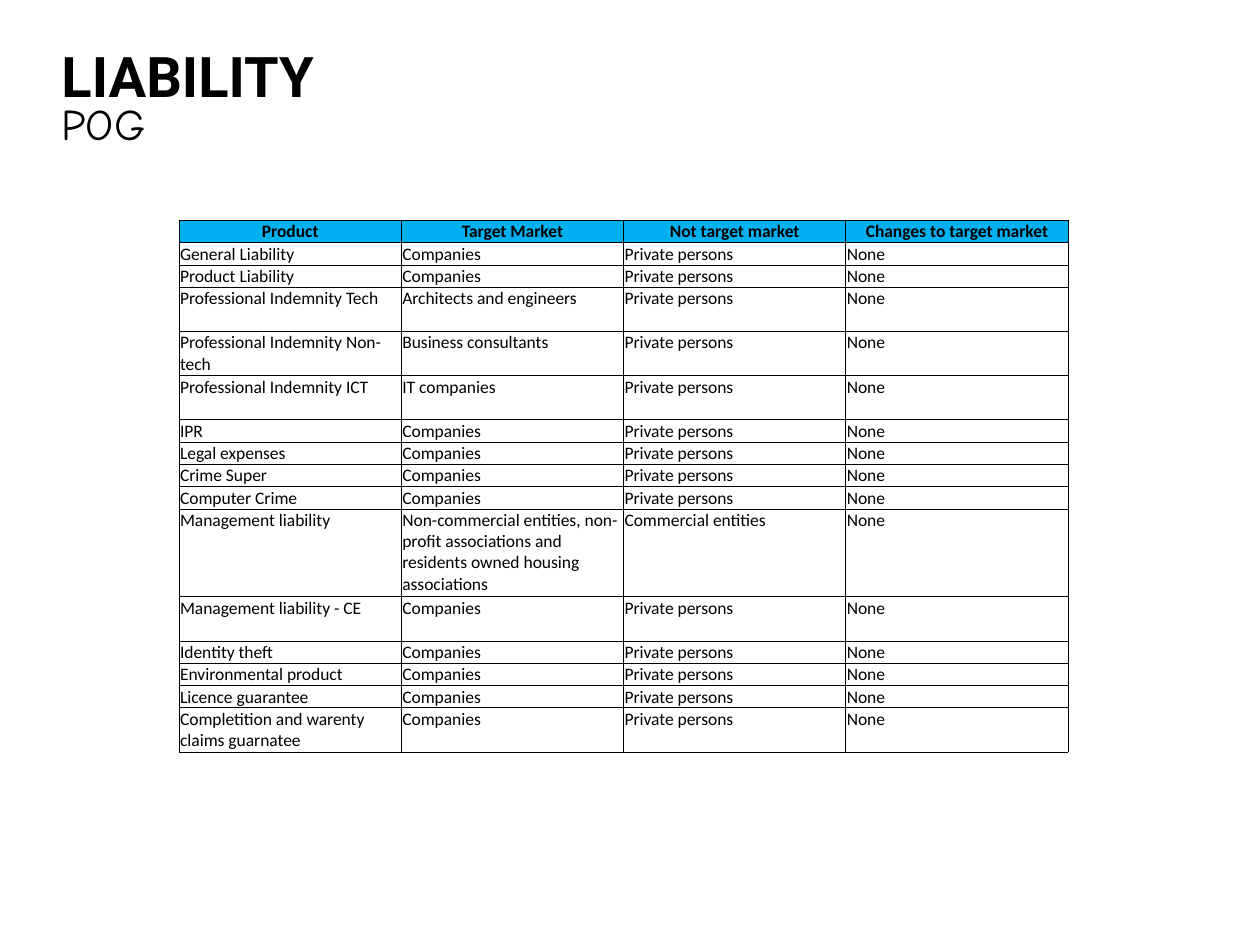
from pptx import Presentation
from pptx import util as u
from pptx.dml.color import RGBColor
from pptx.enum import text
from pptx.oxml import parse_xml
from pptx.oxml.ns import nsdecls

COLORS = {"ink": "000000", "header": "00B0F0"}
LINE_HEIGHTS = {1: 0.45, 2: 0.89, 4: 1.77}
HEADINGS = ["Product", "Target Market", "Not target market", "Changes to target market"]
COMPANIES, PRIVATE = "Companies", "Private persons"

# Product, target market, not target market, lines of row height
PRODUCTS = [
    ("General Liability", COMPANIES, PRIVATE, 1),
    ("Product Liability", COMPANIES, PRIVATE, 1),
    ("Professional Indemnity Tech", "Architects and engineers", PRIVATE, 2),
    ("Professional Indemnity Non-tech", "Business consultants", PRIVATE, 2),
    ("Professional Indemnity ICT", "IT companies", PRIVATE, 2),
    ("IPR", COMPANIES, PRIVATE, 1),
    ("Legal expenses", COMPANIES, PRIVATE, 1),
    ("Crime Super", COMPANIES, PRIVATE, 1),
    ("Computer Crime", COMPANIES, PRIVATE, 1),
    ("Management liability",
     "Non-commercial entities, non-profit associations and residents owned housing associations",
     "Commercial entities", 4),
    ("Management liability - CE", COMPANIES, PRIVATE, 2),
    ("Identity theft", COMPANIES, PRIVATE, 1),
    ("Environmental product", COMPANIES, PRIVATE, 1),
    ("Licence guarantee", COMPANIES, PRIVATE, 1),
    ("Completition and warenty claims guarnatee", COMPANIES, PRIVATE, 2),
]


def write(frame, words, font="Calibri", size=10, bold=False, color="ink",
          align=text.PP_ALIGN.LEFT):
    para = frame.paragraphs[0]
    para.alignment = align
    span = para.add_run()
    span.text = words
    span.font.name = font
    span.font.size = u.Pt(size)
    span.font.bold = bold
    span.font.color.rgb = RGBColor.from_string(COLORS[color])


class SlideBuilder:
    border_width = 0.5
    cell_inset = u.Cm(0.02)

    def __init__(self, page):
        self.page = page

    def heading(self, words, top, height, anchor, **style):
        box = self.page.shapes.add_textbox(u.Cm(0.99), u.Cm(top), u.Cm(23.19), u.Cm(height))
        frame = box.text_frame
        frame.word_wrap = True
        frame.vertical_anchor = anchor
        if anchor == text.MSO_ANCHOR.TOP:
            frame.margin_top = 0
        write(frame, words, **style)

    def border(self, cell):
        """Draw all four cell edges; must run before the cell's fill is set."""
        properties = cell._tc.get_or_add_tcPr()
        for edge in ("lnL", "lnR", "lnT", "lnB"):
            properties.append(parse_xml(
                f'<a:{edge} {nsdecls("a")} w="{u.Pt(self.border_width)}"><a:solidFill>'
                f'<a:srgbClr val="{COLORS["ink"]}"/></a:solidFill></a:{edge}>'))

    def cell(self, cell, words, is_header):
        self.border(cell)
        cell.margin_left = cell.margin_right = cell.margin_top = self.cell_inset
        cell.margin_bottom = 0
        if is_header:
            cell.fill.solid()
            cell.fill.fore_color.rgb = RGBColor.from_string(COLORS["header"])
            write(cell.text_frame, words, bold=True, align=text.PP_ALIGN.CENTER)
        else:
            cell.fill.background()
            write(cell.text_frame, words)

    def table(self, rows, heights, left, top, column_width):
        columns = len(rows[0])
        table = self.page.shapes.add_table(
            len(rows), columns, u.Cm(left), u.Cm(top),
            u.Cm(column_width * columns), u.Cm(sum(heights))).table
        table.horz_banding = False
        for column in table.columns:
            column.width = u.Cm(column_width)
        for index, (row, height) in enumerate(zip(rows, heights)):
            table.rows[index].height = u.Cm(height)
            for position, words in enumerate(row):
                self.cell(table.cell(index, position), words, index == 0)


def main():
    deck = Presentation()
    deck.slide_width, deck.slide_height = u.Cm(25.4), u.Cm(19.05)
    builder = SlideBuilder(deck.slides.add_slide(deck.slide_layouts[6]))
    builder.heading("LIABILITY", 1.02, 0.97, text.MSO_ANCHOR.MIDDLE,
                    font="Roboto", size=32, bold=True)
    builder.heading("POG", 1.96, 1.4, text.MSO_ANCHOR.TOP, font="Comic Neue", size=25)

    rows = [HEADINGS] + [[*product[:3], "None"] for product in PRODUCTS]
    heights = [LINE_HEIGHTS[lines] for lines in [1] + [product[3] for product in PRODUCTS]]
    builder.table(rows, heights, left=3.61, top=4.44, column_width=4.48)
    deck.save("out.pptx")


if __name__ == "__main__":
    main()
